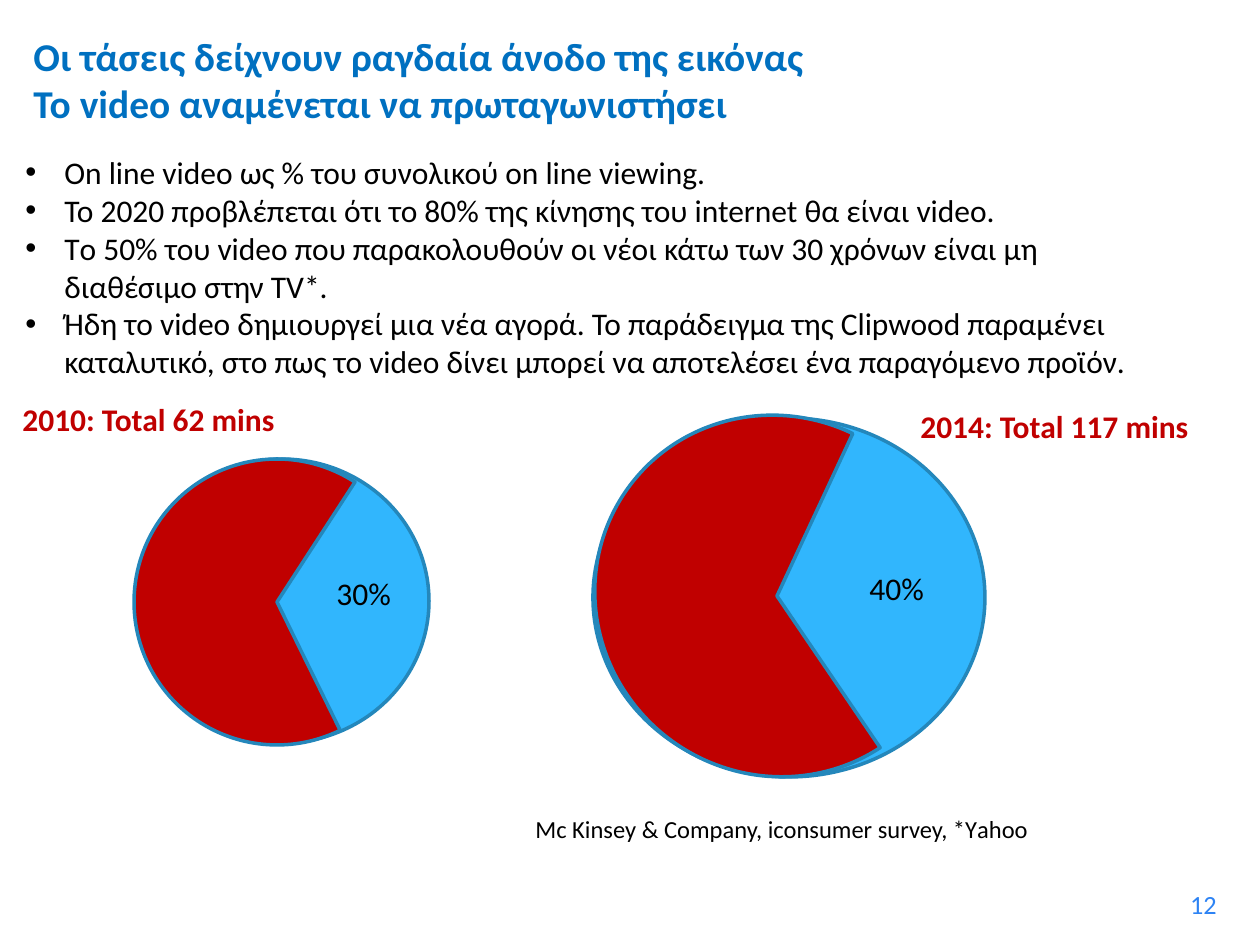
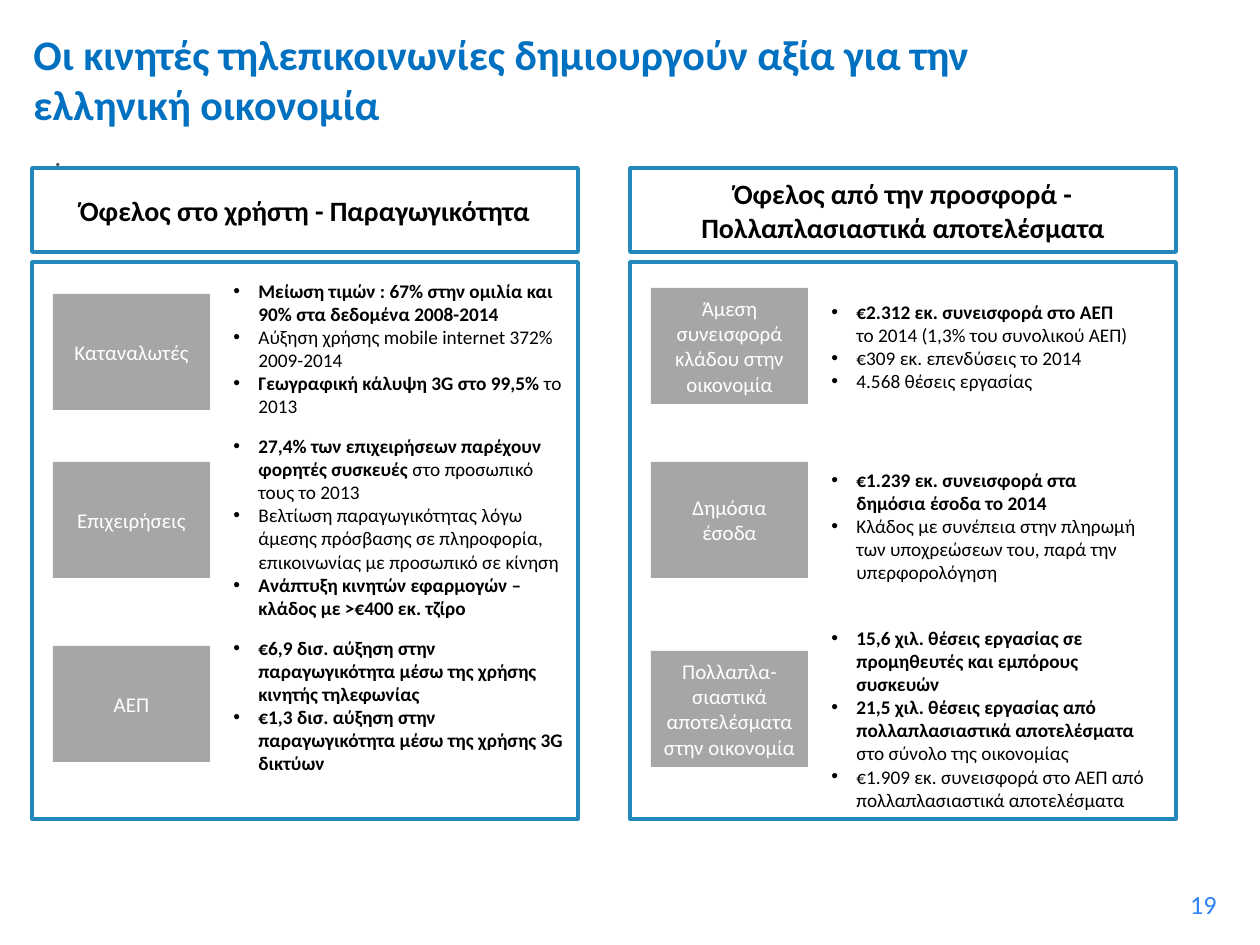
from lxml import etree
from pptx import Presentation, util as u
from pptx.dml.color import RGBColor
from pptx.enum import shapes, text
from pptx.oxml.ns import qn

FONT = "Calibri"
PX = u.Inches(1) / 126
COLORS = {
    "title": "0070C0", "number": "2D83F4", "outline": "2487BB", "slice": "31B6FD",
    "red": "C00000", "label": "A6A6A6", "dot": "595959", "black": "000000", "white": "FFFFFF",
}
LEFT, CENTER, RIGHT = text.PP_ALIGN.LEFT, text.PP_ALIGN.CENTER, text.PP_ALIGN.RIGHT

TREND_BULLETS = [
    ("", "On line video ως % του συνολικού on line viewing."),
    ("", "To 2020 προβλέπεται ότι το 80% της κίνησης του internet θα είναι video."),
    ("", "Tο 50% του video που παρακολουθούν οι νέοι κάτω των 30 χρόνων είναι μη "
         "διαθέσιμο στην ΤV*."),
    ("", "Ήδη το video δημιουργεί μια νέα αγορά. To παράδειγμα της Clipwood παραμένει "
         "καταλυτικό, στο πως το video δίνει μπορεί να αποτελέσει ένα παραγόμενο προϊόν."),
]

# Each row: label, label top, notes top, notes width, notes height, (bold, plain) bullets
USER_ROWS = [
    ("Καταναλωτές", 294, 273, 357, 152, [
        ("Μείωση τιμών : 67% στην ομιλία και 90% στα δεδομένα 2008-2014", ""),
        ("", "Αύξηση χρήσης mobile internet 372% 2009-2014"),
        ("Γεωγραφική κάλυψη 3G στο 99,5%", " το 2013")]),
    ("Επιχειρήσεις", 462, 428, 357, 223, [
        ("27,4% των επιχειρήσεων παρέχουν φορητές συσκευές ", "στο προσωπικό τους το 2013"),
        ("", "Βελτίωση παραγωγικότητας λόγω άμεσης πρόσβασης σε πληροφορία, "
             "επικοινωνίας με προσωπικό σε κίνηση"),
        ("Ανάπτυξη κινητών εφαρμογών – κλάδος με >€400 εκ. τζίρο", "")]),
    ("ΑΕΠ", 646, 630, 357, 152, [
        ("€6,9 δισ. αύξηση στην παραγωγικότητα μέσω της χρήσης κινητής τηλεφωνίας", ""),
        ("€1,3 δισ. αύξηση στην παραγωγικότητα μέσω της χρήσης 3G δικτύων", "")]),
]
SUPPLY_ROWS = [
    ("Άμεση συνεισφορά κλάδου στην οικονομία", 288, 294, 325, 106, [
        ("€2.312 εκ. συνεισφορά στο ΑΕΠ ", "το 2014 (1,3% του συνολικού ΑΕΠ)"),
        ("", "€309 εκ. επενδύσεις το 2014"),
        ("", "4.568 θέσεις εργασίας")]),
    ("Δημόσια έσοδα", 462, 462, 336, 130, [
        ("€1.239 εκ. συνεισφορά στα δημόσια έσοδα το 2014", ""),
        ("", "Κλάδος με συνέπεια στην πληρωμή των υποχρεώσεων του, παρά την "
             "υπερφορολόγηση")]),
    ("Πολλαπλα-σιαστικά αποτελέσματα στην οικονομία", 651, 620, 346, 199, [
        ("15,6 χιλ. θέσεις εργασίας σε προμηθευτές και εμπόρους συσκευών", ""),
        ("21,5 χιλ. θέσεις εργασίας από πολλαπλασιαστικά αποτελέσματα ",
         "στο σύνολο της οικονομίας"),
        ("", "€1.909 εκ. συνεισφορά στο ΑΕΠ από πολλαπλασιαστικά αποτελέσματα")]),
]


def px(*lengths):
    return [round(length * PX) for length in lengths]


def rgb(name):
    return RGBColor.from_string(COLORS[name])


def style_font(font, size, color, bold=False):
    font.name, font.size, font.bold = FONT, u.Pt(size), bold
    font.color.rgb = rgb(color)


def write(text_frame, content, size, color, bold=False, align=LEFT):
    text_frame.word_wrap = True
    text_frame.text = content
    for paragraph in text_frame.paragraphs:
        paragraph.alignment = align
        for run in paragraph.runs:
            style_font(run.font, size, color, bold)


def add_text(slide, box, content, size, color="black", bold=False, align=LEFT):
    shape = slide.shapes.add_textbox(*px(*box))
    write(shape.text_frame, content, size, color, bold, align)
    return shape


def add_bullets(slide, box, items, size, indent):
    """Add a bulleted list whose items are (bold start, plain rest) pairs."""
    text_frame = slide.shapes.add_textbox(*px(*box)).text_frame
    text_frame.word_wrap = True
    [hang] = px(indent)
    for index, item in enumerate(items):
        paragraph = text_frame.add_paragraph() if index else text_frame.paragraphs[0]
        properties = paragraph._p.get_or_add_pPr()
        properties.set("marL", str(hang))
        properties.set("indent", str(-hang))
        etree.SubElement(properties, qn("a:buFont")).set("typeface", "Arial")
        etree.SubElement(properties, qn("a:buChar")).set("char", "•")
        for part, bold in zip(item, (True, False)):
            if part:
                run = paragraph.add_run()
                run.text = part
                style_font(run.font, size, "black", bold)


def add_shape(slide, kind, box, fill=None, outlined=True):
    shape = slide.shapes.add_shape(kind, *px(*box))
    shape.shadow.inherit = False
    if fill:
        shape.fill.solid()
        shape.fill.fore_color.rgb = rgb(fill)
    else:
        shape.fill.background()
    if outlined:
        shape.line.color.rgb = rgb("outline")
        shape.line.width = u.Pt(2)
    else:
        shape.line.fill.background()
    return shape


def add_label(slide, box, content, size, color, bold=False, **look):
    """Add a rectangle with centred text."""
    shape = add_shape(slide, shapes.MSO_SHAPE.RECTANGLE, box, **look)
    shape.text_frame.vertical_anchor = text.MSO_ANCHOR.MIDDLE
    write(shape.text_frame, content, size, color, bold, CENTER)


def add_share(slide, disc, pie, rotation, share, share_box):
    """Lay a red pie over a blue disc, leaving the share visible."""
    add_shape(slide, shapes.MSO_SHAPE.FLOWCHART_CONNECTOR, disc, "slice")
    red_part = add_shape(slide, shapes.MSO_SHAPE.PIE, pie, "red")
    red_part.adjustments[0], red_part.adjustments[1] = 11.27, 154.81
    red_part.rotation = rotation
    add_text(slide, share_box, share, 18)


def add_slide(presentation, number, title, title_size):
    slide = presentation.slides.add_slide(presentation.slide_layouts[6])
    add_text(slide, (935, 882, 294, 50), number, 15, "number", align=RIGHT)
    heading = add_text(slide, (21, 21, 987, 116), title, title_size, "title", bold=True)
    heading.text_frame.vertical_anchor = text.MSO_ANCHOR.MIDDLE
    return slide


def add_benefit_column(slide, left, heading, rows):
    add_shape(slide, shapes.MSO_SHAPE.RECTANGLE, (left, 262, 546, 557))
    add_label(slide, (left, 168, 546, 84), heading, 16, "black", bold=True)
    for label, label_top, notes_top, width, height, notes in rows:
        add_label(slide, (left + 21, label_top, 157, 116), label, 12, "white",
                  fill="label", outlined=False)
        add_bullets(slide, (left + 189, notes_top, width, height), notes, 11, 25)


def build_video_slide(presentation):
    slide = add_slide(presentation, "12", "Οι τάσεις δείχνουν ραγδαία άνοδο της εικόνας\v"
                      "Το video αναμένεται να πρωταγωνιστήσει", 22.5)
    add_bullets(slide, (13, 147, 1162, 242), TREND_BULLETS, 18, 39)
    add_share(slide, (135, 459, 294, 284), (134, 459, 286, 286), 45,
              "30%", (324, 568, 95, 53))
    add_share(slide, (593, 418, 392, 359), (593, 417, 368, 358), 37,
              "40%", (857, 563, 93, 52))
    add_text(slide, (10, 394, 289, 50), "2010: Total 62 mins", 18, "red", bold=True)
    add_text(slide, (908, 401, 352, 50), "2014: Total 117 mins", 18, "red", bold=True)
    add_text(slide, (523, 808, 780, 43), "Mc Kinsey & Company, iconsumer survey, *Υahoo", 14)


def build_economy_slide(presentation):
    slide = add_slide(presentation, "19", "Οι κινητές τηλεπικοινωνίες δημιουργούν αξία "
                      "για την ελληνική οικονομία", 24)
    add_text(slide, (42, 132, 1191, 47), ".", 16, "dot")
    add_benefit_column(slide, 32, "Όφελος στο χρήστη - Παραγωγικότητα", USER_ROWS)
    add_benefit_column(slide, 630, "Όφελος από την προσφορά - Πολλαπλασιαστικά αποτελέσματα",
                       SUPPLY_ROWS)


def main():
    presentation = Presentation()
    presentation.slide_width, presentation.slide_height = px(1260, 945)
    build_video_slide(presentation)
    build_economy_slide(presentation)
    presentation.save("out.pptx")


if __name__ == "__main__":
    main()
